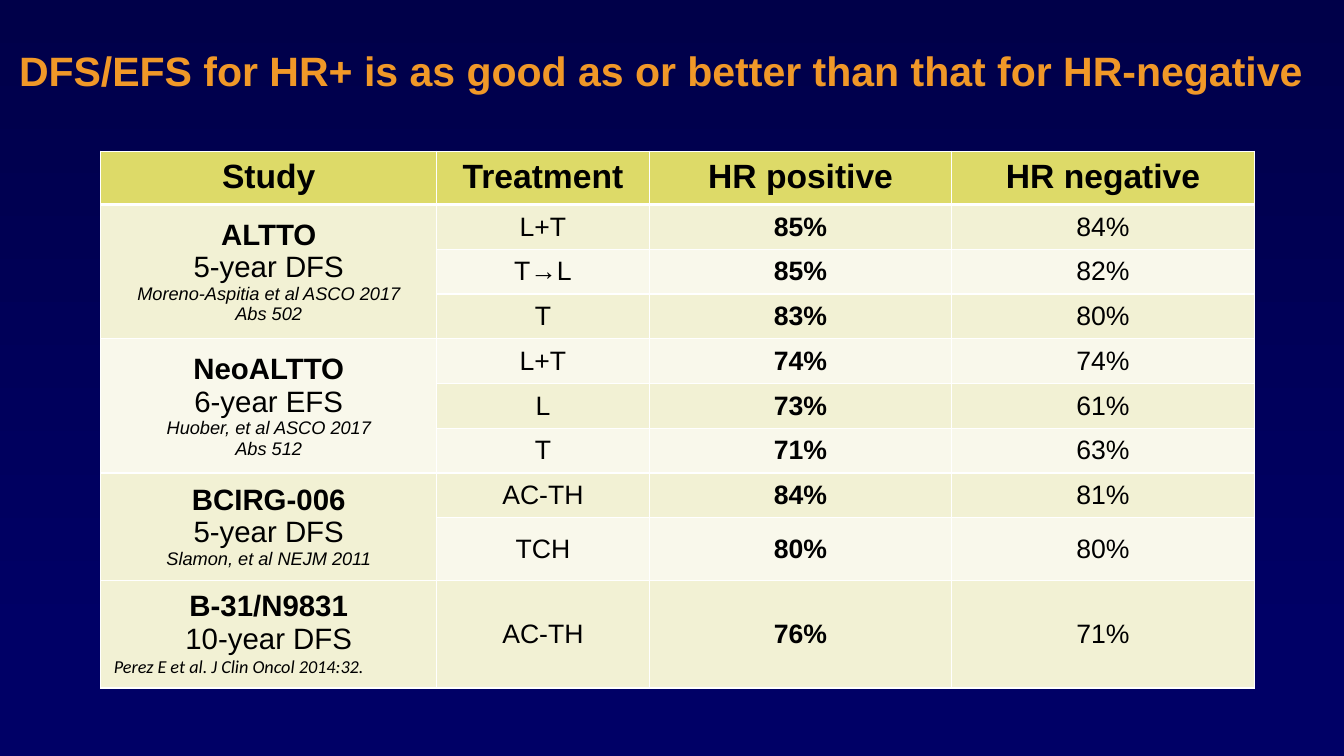
import pptx
import pptx.dml.color
import pptx.enum.shapes
import pptx.enum.text
import pptx.util
from lxml import etree

RGBColor = pptx.dml.color.RGBColor
Inches = pptx.util.Inches
Pt = pptx.util.Pt
Align = pptx.enum.text.PP_ALIGN
Anchor = pptx.enum.text.MSO_ANCHOR

NAVY = RGBColor(0x00, 0x00, 0x66)
MIDNIGHT = RGBColor(0x00, 0x00, 0x49)
ORANGE = RGBColor(0xF0, 0x98, 0x28)
BLACK = RGBColor(0x00, 0x00, 0x00)
HEADER = RGBColor(0xDD, 0xDA, 0x68)
BANDS = [RGBColor(0xF2, 0xF1, 0xD4), RGBColor(0xF9, 0xF8, 0xEB)]
DRAWING = "http://schemas.openxmlformats.org/drawingml/2006/main"

HEADINGS = ["Study", "Treatment", "HR positive", "HR negative"]
# Study, endpoint, citation, citation format, then treatment, positive, negative
STUDIES = [
    ("ALTTO", "5-year DFS", "Moreno-Aspitia et al ASCO 2017\vAbs 502", {},
     [("L+T", "85%", "84%"), ("T→L", "85%", "82%"), ("T", "83%", "80%")]),
    ("NeoALTTO", "6-year EFS", "Huober, et al ASCO 2017\vAbs 512", {},
     [("L+T", "74%", "74%"), ("L", "73%", "61%"), ("T", "71%", "63%")]),
    ("BCIRG-006", "5-year DFS", "Slamon, et al NEJM 2011", {},
     [("AC-TH", "84%", "81%"), ("TCH", "80%", "80%")]),
    ("B-31/N9831", "10-year DFS", "Perez E et al. J Clin Oncol 2014:32.",
     {"font": "Calibri", "align": Align.LEFT}, [("AC-TH", "76%", "71%")]),
]
COLUMNS = [3.33, 2.11, 3, 3]
ROWS = [0.53] + [0.444] * 7 + [0.62, 1.07]


def write(frame, text, size=19, font="Arial", color=BLACK, bold=False,
          italic=False, align=Align.CENTER):
    """Fill the first paragraph, or add one when the frame has text."""
    para = frame.add_paragraph() if frame.text else frame.paragraphs[0]
    para.text = text
    para.alignment = align
    for span in para.runs:
        span.font.size = Pt(size)
        span.font.name = font
        span.font.color.rgb = color
        span.font.bold = bold
        span.font.italic = italic
    return para


def style_cell(cell, fill, bottom=1):
    """Set the fill, margins and white borders of a cell."""
    cell.fill.solid()
    cell.fill.fore_color.rgb = fill
    cell.margin_left = cell.margin_right = Inches(0.13)
    cell.margin_top = cell.margin_bottom = Inches(0.07)
    properties = cell._tc.get_or_add_tcPr()
    for place, (side, width) in enumerate(
            [("lnL", 1), ("lnR", 1), ("lnT", 1), ("lnB", bottom)]):
        properties.insert(place, etree.fromstring(
            f'<a:{side} xmlns:a="{DRAWING}" w="{Pt(width)}"><a:solidFill>'
            f'<a:srgbClr val="FFFFFF"/></a:solidFill></a:{side}>'))


deck = pptx.Presentation()
deck.slide_width, deck.slide_height = Inches(13.33), Inches(7.5)
page = deck.slides.add_slide(deck.slide_layouts[5])

# Background: solid navy with a darker gradient above
page.background.fill.solid()
page.background.fill.fore_color.rgb = NAVY
sky = page.shapes.add_shape(pptx.enum.shapes.MSO_SHAPE.RECTANGLE, 0, 0,
                            deck.slide_width, Inches(6.42))
sky.shadow.inherit = False
sky.line.fill.background()
sky.fill.gradient()
sky.fill.gradient_angle = 270
for stop, color in zip(sky.fill.gradient_stops, [MIDNIGHT, NAVY]):
    stop.color.rgb = color
page.shapes._spTree.insert(2, sky._element)

# Title with a soft text shadow
title = page.shapes.title
title.left, title.top = 0, Inches(0.33)
title.width, title.height = Inches(13.11), Inches(0.8)
title.text_frame.auto_size = pptx.enum.text.MSO_AUTO_SIZE.NONE
title.text_frame.vertical_anchor = Anchor.MIDDLE
heading = write(title.text_frame,
                "DFS/EFS for HR+ is as good as or better than that for HR-negative",
                size=29.3, color=ORANGE, bold=True)
heading.line_spacing = 0.9
heading_fill = heading.runs[0].font._element.find(f"{{{DRAWING}}}solidFill")
heading_fill.addnext(etree.fromstring(
    f'<a:effectLst xmlns:a="{DRAWING}"><a:outerShdw blurRad="38100" dist="38100" '
    'dir="2700000"><a:srgbClr val="000000"/></a:outerShdw></a:effectLst>'))

# Table grid
table = page.shapes.add_table(len(ROWS), len(COLUMNS), Inches(1), Inches(1.5),
                              Inches(sum(COLUMNS)), Inches(sum(ROWS))).table
for column, width in zip(table.columns, COLUMNS):
    column.width = Inches(width)
for row, height in zip(table.rows, ROWS):
    row.height = Inches(height)

# Header row
for cell, text in zip(table.rows[0].cells, HEADINGS):
    style_cell(cell, HEADER, bottom=3)
    write(cell.text_frame, text, size=24, bold=True)

# Studies: one merged cell each, beside banded result rows
first = 1
for name, endpoint, citation, citation_format, results in STUDIES:
    last = first + len(results) - 1
    for index, result in enumerate(results, first):
        style_cell(table.cell(index, 0), BANDS[(first - 1) % 2])
        for position, text in enumerate(result, 1):
            cell = table.cell(index, position)
            style_cell(cell, BANDS[(index - 1) % 2])
            cell.vertical_anchor = Anchor.MIDDLE
            write(cell.text_frame, text, bold=position == 2)
    study = table.cell(first, 0)
    if last > first:
        study.merge(table.cell(last, 0))
    study.vertical_anchor = Anchor.MIDDLE
    write(study.text_frame, name, size=21, bold=True)
    write(study.text_frame, endpoint, size=21)
    write(study.text_frame, citation, size=13, italic=True, **citation_format)
    first = last + 1

deck.save("out.pptx")
